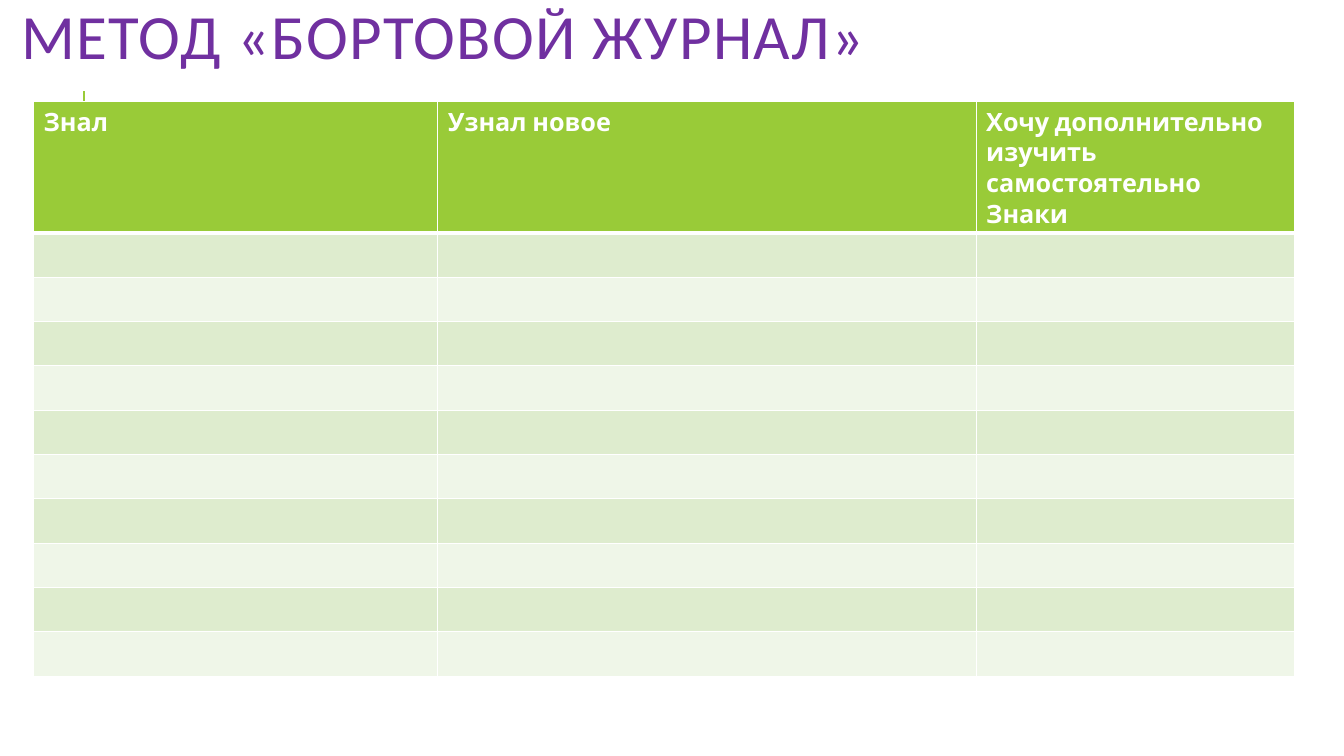
from dataclasses import dataclass

from lxml.etree import SubElement as Sub
from pptx import Presentation as Deck
from pptx.dml.color import RGBColor as Color
from pptx.enum.shapes import MSO_CONNECTOR as Link
from pptx.enum.text import MSO_ANCHOR as Anchor
from pptx.oxml.ns import qn
from pptx.util import Inches, Pt


@dataclass(frozen=True)
class Theme:
    title: str = "7030A0"
    green: str = "99CB38"
    bands: tuple = ("DEECCE", "EFF6E8")
    white: str = "FFFFFF"
    head_font: str = "Calibri"
    body_font: str = "Cabin"
    big: int = 45
    body: int = 18
    thin: int = 1
    thick: int = 3
    rule: float = 1.5


class Page:
    COLS, ROWS = 120, 75

    def __init__(self, deck, theme):
        self.theme = theme
        self.wide = deck.slide_width
        self.high = deck.slide_height
        self.slide = deck.slides.add_slide(deck.slide_layouts[6])
        self.shapes = self.slide.shapes

    def x(self, cols):
        return round(self.wide * cols / self.COLS)

    def y(self, rows):
        return round(self.high * rows / self.ROWS)

    def box(self, left, top, width, height):
        return self.x(left), self.y(top), self.x(width), self.y(height)

    def style(self, para, face, size, color, bold=False):
        for run in para.runs:
            font = run.font
            font.name, font.size, font.bold = face, Pt(size), bold
            font.color.rgb = Color.from_string(color)

    def line(self, left, top, end):
        rule = self.shapes.add_connector(
            Link.STRAIGHT, self.x(left), self.y(top), self.x(left), self.y(end))
        rule.line.color.rgb = Color.from_string(self.theme.green)
        rule.line.width = Pt(self.theme.rule)
        Sub(rule._element.spPr, qn("a:effectLst"))

    def title(self, text, *place):
        frame = self.shapes.add_textbox(*self.box(*place)).text_frame
        frame.word_wrap = True
        frame.vertical_anchor = Anchor.MIDDLE
        frame.text = text
        para = frame.paragraphs[0]
        para.line_spacing = 0.8
        self.style(para, self.theme.head_font, self.theme.big, self.theme.title)
        para.runs[0]._r.get_or_add_rPr().set("spc", "100")

    def border(self, cell, low):
        props = cell._tc.get_or_add_tcPr()
        thin = self.theme.thin
        for side, width in zip("LRTB", (thin, thin, thin, low)):
            edge = Sub(props, qn(f"a:ln{side}"), w=str(Pt(width)))
            fill = Sub(edge, qn("a:solidFill"))
            Sub(fill, qn("a:srgbClr"), val=self.theme.white)

    def paint(self, cell, color, low):
        self.border(cell, low)
        cell.fill.solid()
        cell.fill.fore_color.rgb = Color.from_string(color)

    def table(self, left, top, heads, widths, head, row, count):
        place = self.box(left, top, sum(widths), head + row * count)
        grid = self.shapes.add_table(count + 1, len(heads), *place).table
        grid.first_row = grid.horz_banding = False
        for col, width in zip(grid.columns, widths):
            col.width = self.x(width)
        theme = self.theme
        for num, line in enumerate(grid.rows):
            line.height = self.y(row if num else head)
            color = theme.bands[(num - 1) % 2] if num else theme.green
            for cell in line.cells:
                self.paint(cell, color, theme.thin if num else theme.thick)
        for cell, text in zip(grid.rows[0].cells, heads):
            cell.text_frame.text = text
            for para in cell.text_frame.paragraphs:
                self.style(para, theme.body_font, theme.body, theme.white, True)


def main():
    deck = Deck()
    deck.slide_width, deck.slide_height = Inches(13.33), Inches(7.5)
    page = Page(deck, Theme())
    page.line(7.5, 19, 9)
    page.title("МЕТОД «БОРТОВОЙ ЖУРНАЛ»", 1, 0, 81, 8.3)
    heads = ("Знал", "Узнал новое",
             "Хочу дополнительно изучить самостоятельно\nЗнаки")
    page.table(3, 10.1, heads, (36.1, 48.06, 28.44), 10.8, 4.4, 10)
    deck.save("out.pptx")


if __name__ == "__main__":
    main()
